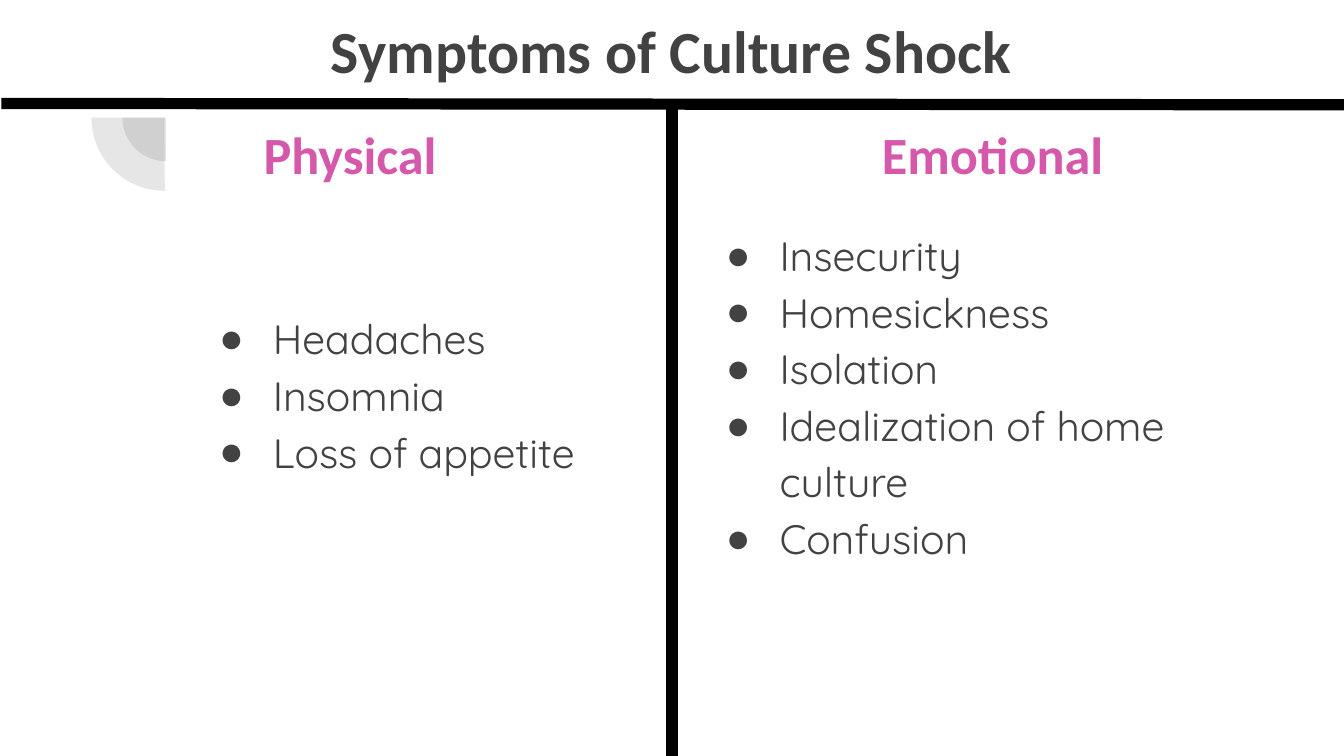
"""Build a slide comparing physical and emotional symptoms of culture shock."""
from pptx import Presentation
from pptx.dml.color import RGBColor
from pptx.enum.shapes import MSO_CONNECTOR, MSO_SHAPE
from pptx.enum.text import MSO_ANCHOR, MSO_AUTO_SIZE, PP_ALIGN
from pptx.oxml.ns import qn
from pptx.util import Inches, Pt
from lxml import etree

STRAIGHT = MSO_CONNECTOR.STRAIGHT
PIE = MSO_SHAPE.PIE
TOP = MSO_ANCHOR.TOP
NO_FIT = MSO_AUTO_SIZE.NONE
LEFT, CENTER = PP_ALIGN.LEFT, PP_ALIGN.CENTER
DARK_GRAY = RGBColor(0x42, 0x42, 0x42)
PINK = RGBColor(0xD5, 0x58, 0xAB)
BLACK = RGBColor(0, 0, 0)


def write_text(shape, lines, box, font="Calibri", size=28, color=PINK,
               bold=True, align=CENTER, spacing=1.0, bullet=None):
    shape.left, shape.top, shape.width, shape.height = map(Inches, box)
    frame = shape.text_frame
    frame.word_wrap = True
    frame.auto_size = NO_FIT
    frame.vertical_anchor = TOP
    frame.margin_left = frame.margin_right = Inches(0.1)
    frame.margin_top = frame.margin_bottom = Inches(0.1)
    frame.text = "\n".join(lines)
    for paragraph in frame.paragraphs:
        paragraph.alignment = align
        paragraph.line_spacing = spacing
        paragraph.space_before = paragraph.space_after = Pt(0)
        run_font = paragraph.runs[0].font
        run_font.name = font
        run_font.size = Pt(size)
        run_font.bold = bold
        run_font.color.rgb = color
        if bullet:
            properties = paragraph._p.get_or_add_pPr()
            properties.set("marL", str(Inches(0.5)))
            properties.set("indent", str(Inches(-0.4)))
            bullet_color = etree.SubElement(properties, qn("a:buClr"))
            etree.SubElement(bullet_color, qn("a:srgbClr"), val=str(color))
            etree.SubElement(properties, qn("a:buChar"), char=bullet)


presentation = Presentation()
presentation.slide_width = Inches(10)
presentation.slide_height = Inches(10) * 9 // 16
slide = presentation.slides.add_slide(presentation.slide_layouts[4])
title, physical_heading, physical_list, emotional_heading, emotional_list = list(
    slide.placeholders)[:5]

for left, top, diameter in ((0.91, 0.55, 0.65), (0.68, 0.33, 1.09)):
    pie = slide.shapes.add_shape(
        PIE, Inches(left), Inches(top), Inches(diameter), Inches(diameter))
    pie.adjustments[0] = 107.93
    pie.adjustments[1] = 162
    pie.rotation = 270
    pie.shadow.inherit = False
    pie.line.fill.background()
    pie.fill.solid()
    pie.fill.fore_color.rgb = DARK_GRAY
    pie_color = pie._element.spPr.find(qn("a:solidFill"))[0]
    etree.SubElement(pie_color, qn("a:alpha"), val="13000")

write_text(title, ["Symptoms of Culture Shock"], (0.42, 0, 9.15, 0.75),
           size=32, color=DARK_GRAY)
write_text(physical_heading, ["Physical"], (0.42, 0.81, 4.37, 0.75))
write_text(emotional_heading, ["Emotional"], (5.2, 0.81, 4.37, 0.75))

list_format = dict(font="Quicksand", size=22, color=DARK_GRAY, bold=False,
                   align=LEFT, spacing=1.15, bullet="●")
write_text(physical_list, ["Headaches", "Insomnia", "Loss of appetite"],
           (1.43, 2.18, 3.75, 2.78), **list_format)
write_text(emotional_list,
           ["Insecurity", "Homesickness", "Isolation",
            "Idealization of home culture", "Confusion"],
           (5.2, 1.56, 4.37, 3.96), **list_format)

for ends in ((0.01, 0.77, 10.01, 0.78), (5, 5.65, 5, 0.75)):
    divider = slide.shapes.add_connector(STRAIGHT, *map(Inches, ends))
    divider.line.color.rgb = BLACK
    divider.line.width = Pt(6)
    etree.SubElement(divider._element.spPr, qn("a:effectLst"))

for placeholder in list(slide.placeholders):
    if not placeholder.text_frame.text:
        placeholder._element.getparent().remove(placeholder._element)

presentation.save("out.pptx")
